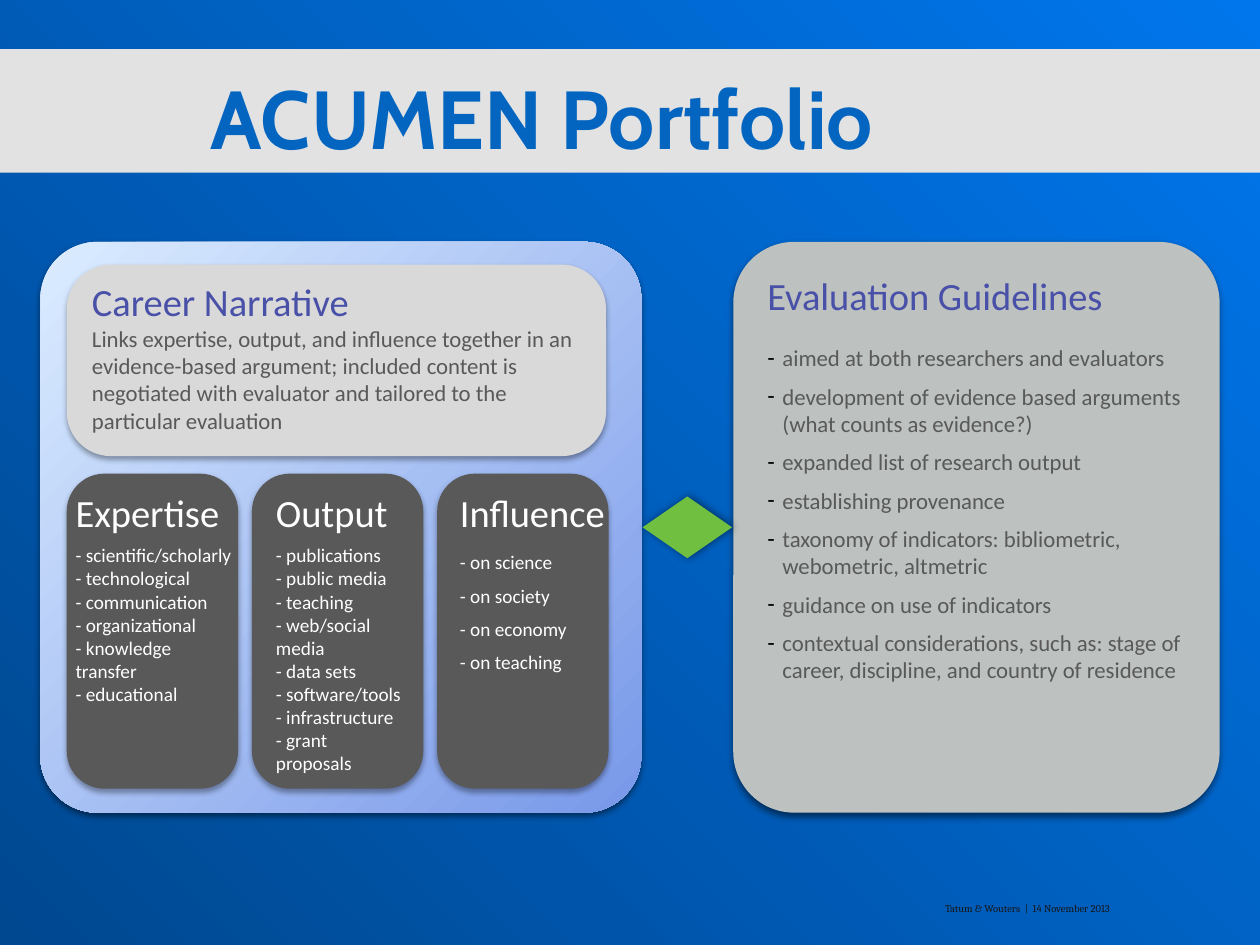
from lxml import etree
from pptx import Presentation
from pptx.dml.color import RGBColor
from pptx.enum.shapes import MSO_SHAPE as Shape
from pptx.enum.text import MSO_ANCHOR as Anchor, MSO_AUTO_SIZE as AutoSize, PP_ALIGN as Align
from pptx.oxml import parse_xml
from pptx.oxml.ns import nsdecls, qn
from pptx.util import Inches, Pt

# Content
TITLE = "ACUMEN Portfolio"
NARRATIVE = ("Career Narrative",
             "Links expertise, output, and influence together in an evidence-based argument; "
             "included content is negotiated with evaluator and tailored to the particular evaluation")
# heading, text left, text width, space before first item, space before others, items
CARDS = [
    ("Expertise", 0.55, 1.36, 5, 0,
     ["scientific/scholarly", "technological", "communication", "organizational",
      "knowledge transfer", "educational"]),
    ("Output", 2.14, 1.14, 5, 0,
     ["publications", "public media", "teaching", "web/social media", "data sets",
      "software/tools", "infrastructure", "grant proposals"]),
    ("Influence", 3.6, 1.39, 9, 5.7,
     ["on science", "on society", "on economy", "on teaching"]),
]
GUIDELINES_HEADING = "Evaluation Guidelines"
GUIDELINES = [
    "aimed at both researchers and evaluators",
    "development of evidence based arguments (what counts as evidence?)",
    "expanded list of research output",
    "establishing provenance",
    "taxonomy of indicators: bibliometric, webometric, altmetric",
    "guidance on use of indicators",
    "contextual considerations, such as: stage of career, discipline, and country of residence",
]
FOOTER = "Tatum & Wouters  |  14 November 2013"

BLUE, VIOLET, GREY, WHITE = "0365C0", "4950A8", "595959", "FFFFFF"
PANEL_SHADOW = (50, 4, 2, 90)  # opacity %, blur pt, distance pt, direction
CARD_SHADOW = (35, 3, 1.8, 90)
ARROW_SHADOW = (50, 5, 1, 0)


def rgb(color):
    return RGBColor.from_string(color)


def add_box(kind, place, color, shadow=None, adjustments=()):
    box = slide.shapes.add_shape(kind, *map(Inches, place))
    for index, value in enumerate(adjustments):
        box.adjustments[index] = value
    if isinstance(color, tuple):
        box.fill.gradient()
        box.fill.gradient_angle = 315
        for stop, stop_color in zip(box.fill.gradient_stops, color):
            stop.color.rgb = rgb(stop_color)
    else:
        box.fill.solid()
        box.fill.fore_color.rgb = rgb(color)
    box.line.fill.background()
    box.shadow.inherit = False
    if shadow:
        opacity, blur, distance, direction = shadow
        box._element.spPr.find(qn("a:effectLst")).append(parse_xml(
            f'<a:outerShdw {nsdecls("a")} blurRad="{Pt(blur)}" dist="{Pt(distance)}" '
            f'dir="{direction * 60000}" rotWithShape="0"><a:srgbClr val="000000">'
            f'<a:alpha val="{opacity * 1000}"/></a:srgbClr></a:outerShdw>'))
    return box


def set_frame(shape, inset, anchor=Anchor.TOP):
    frame = shape.text_frame
    frame.word_wrap = True
    frame.auto_size = AutoSize.NONE
    frame.vertical_anchor = anchor
    frame.margin_left = frame.margin_right = Inches(inset)
    frame.margin_top = frame.margin_bottom = Inches(inset)
    return frame


def add_text(place, inset, anchor=Anchor.TOP):
    return set_frame(slide.shapes.add_textbox(*map(Inches, place)), inset, anchor)


def place_on_top(placeholder, place):
    placeholder.left, placeholder.top, placeholder.width, placeholder.height = map(Inches, place)
    slide.shapes._spTree.append(placeholder._element)
    return placeholder


def write(frame, text, size, color, font="Calibri", bold=False, before=0, first=False):
    paragraph = frame.paragraphs[0] if first else frame.add_paragraph()
    paragraph.alignment = Align.LEFT
    paragraph.space_before = Pt(before)
    run = paragraph.add_run()
    run.text = text
    run.font.size, run.font.name, run.font.bold = Pt(size), font, bold
    run.font.color.rgb = rgb(color)
    return paragraph


def set_bullet(paragraph, char=None):
    properties = paragraph._p.get_or_add_pPr()
    properties.set("marL", str(Inches(0.12)))
    properties.set("indent", str(-Inches(0.12)))
    if char:
        bullet_color = etree.SubElement(properties, qn("a:buClr"))
        etree.SubElement(bullet_color, qn("a:srgbClr"), val="000000")
        etree.SubElement(properties, qn("a:buChar"), char=char)
    else:
        etree.SubElement(properties, qn("a:buNone"))


prs = Presentation()
prs.slide_width, prs.slide_height = Inches(10), Inches(7.5)
slide = prs.slides.add_slide(prs.slide_layouts[1])
title, guidelines = slide.placeholders

# Background: radial gradient from the top right corner
slide.background.fill.solid()
background = slide.background._cSld.bg.bgPr
background.replace(background[0], parse_xml(
    f'<a:gradFill {nsdecls("a")} rotWithShape="1"><a:gsLst>'
    '<a:gs pos="0"><a:srgbClr val="0076EC"/></a:gs>'
    '<a:gs pos="100000"><a:srgbClr val="004890"/></a:gs></a:gsLst>'
    '<a:path path="circle"><a:fillToRect l="100000" b="100000"/></a:path></a:gradFill>'))

# Title band
add_box(Shape.RECTANGLE, (0, 0.39, 10, 0.98), "E2E2E2")
place_on_top(title, (1.64, 0.51, 6.86, 0.83))
write(set_frame(title, 0.03, Anchor.MIDDLE), TITLE, 47, BLUE, "Cabin", bold=True, first=True)

# Portfolio panel with the career narrative
add_box(Shape.ROUNDED_RECTANGLE, (0.32, 1.92, 4.77, 4.53), ("DBECFF", "7898E9"), PANEL_SHADOW, [0.1])
add_box(Shape.ROUNDED_RECTANGLE, (0.53, 2.1, 4.28, 1.52), "D9D9D9", CARD_SHADOW, [0.23])
narrative = add_text((0.68, 2.16, 4.09, 1.3), 0.05)
write(narrative, NARRATIVE[0], 22, VIOLET, first=True)
write(narrative, NARRATIVE[1], 13, GREY)

# Three cards
for column, (heading, left, width, first_gap, gap, items) in enumerate(CARDS):
    add_box(Shape.ROUNDED_RECTANGLE, (0.53 + 1.47 * column, 3.76, 1.36, 2.5), GREY, CARD_SHADOW, [0.22])
    card = add_text((left, 3.83, width, 2.4), 0.05)
    write(card, heading, 22, WHITE, first=True)
    for row, item in enumerate(items):
        write(card, f"- {item}", 11, WHITE, before=gap if row else first_gap)

# Evaluation guidelines
add_box(Shape.ROUNDED_RECTANGLE, (5.82, 1.92, 3.86, 4.53), "BDC1C0", PANEL_SHADOW, [0.125])
place_on_top(guidelines, (6.07, 2.14, 3.38, 4.26))
guideline_frame = set_frame(guidelines, 0.02)
set_bullet(write(guideline_frame, GUIDELINES_HEADING, 22, VIOLET, first=True))
for row, guideline in enumerate(GUIDELINES):
    set_bullet(write(guideline_frame, guideline, 13, GREY, before=6.3 if row else 14.6), "-")

# Link between the panels
add_box(Shape.LEFT_RIGHT_ARROW, (5.1, 3.94, 0.71, 0.49), "70BF41", ARROW_SHADOW, [0.32, 0.75])

# Footer
footer = add_text((7.42, 7.12, 1.92, 0.17), 0.08, Anchor.MIDDLE)
write(footer, FOOTER, 6, "161616", "Cambria", first=True)

prs.save("out.pptx")
